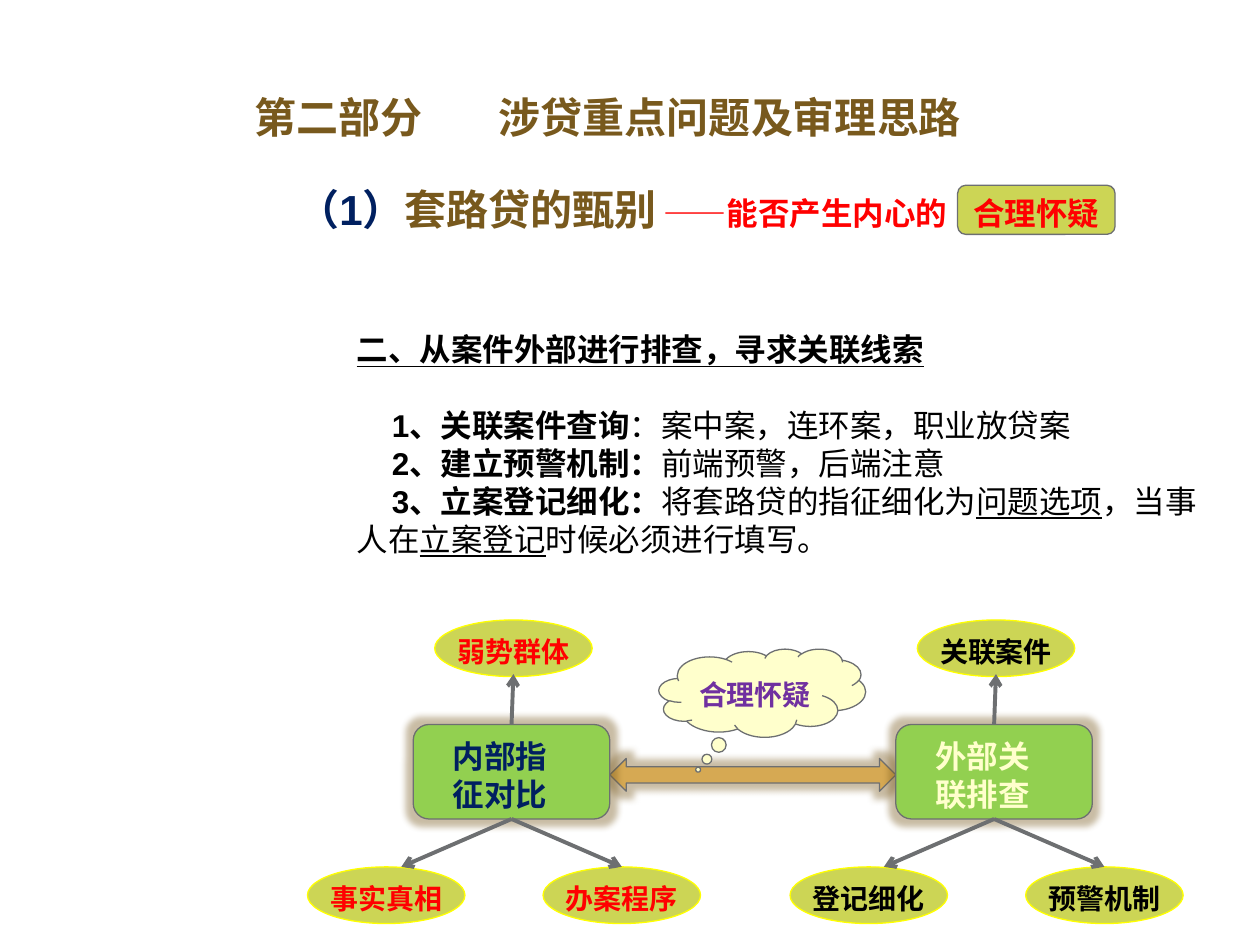
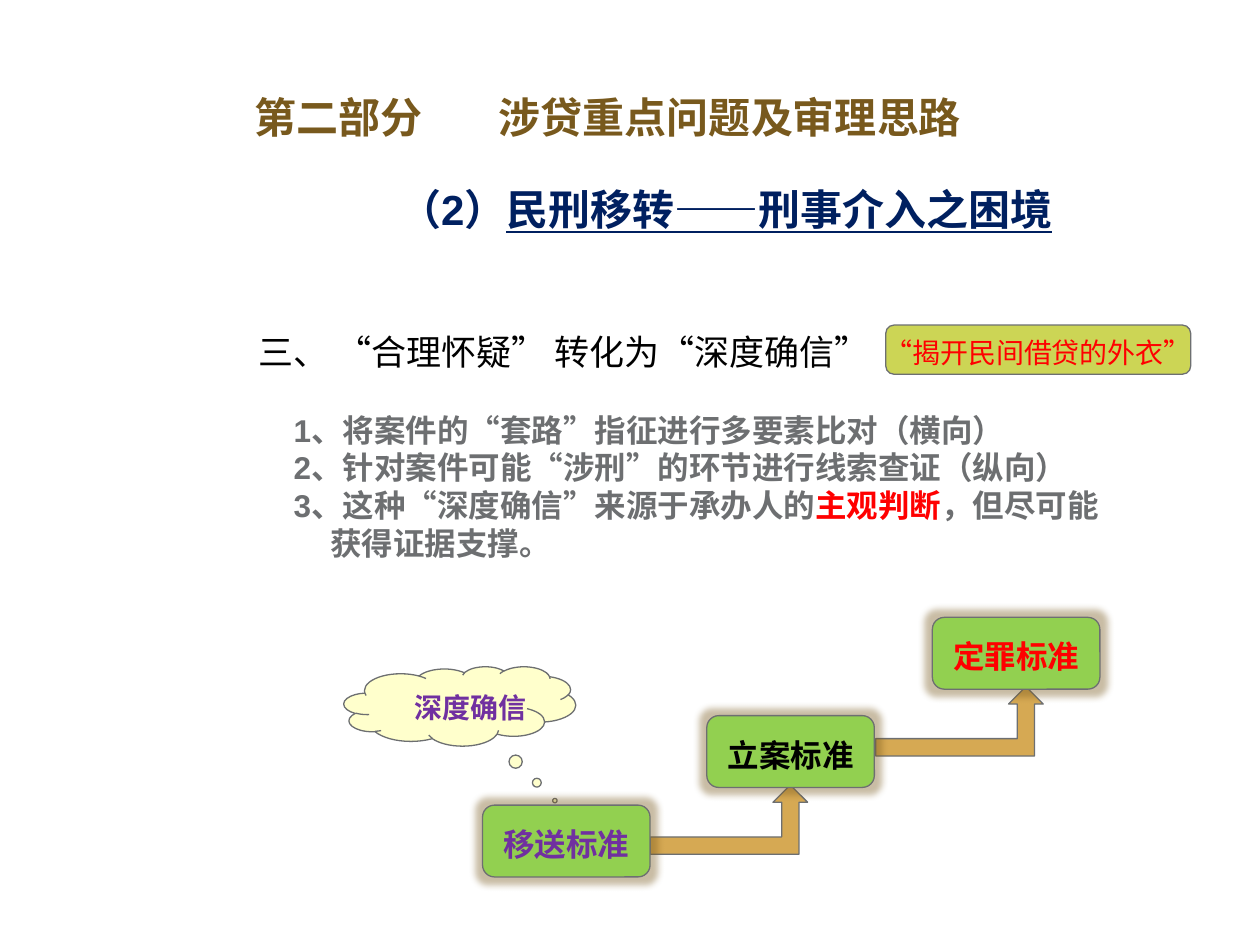
from dataclasses import dataclass

from lxml import etree
from pptx import Presentation
from pptx.dml.color import RGBColor
from pptx.enum.shapes import MSO_CONNECTOR, MSO_SHAPE
from pptx.enum.text import MSO_ANCHOR, MSO_AUTO_SIZE, PP_ALIGN
from pptx.oxml.ns import qn
from pptx.util import Inches, Pt

ROUNDED = MSO_SHAPE.ROUNDED_RECTANGLE
OVAL = MSO_SHAPE.OVAL
CLOUD = MSO_SHAPE.CLOUD_CALLOUT
DOUBLE_ARROW = MSO_SHAPE.LEFT_RIGHT_ARROW
BENT_ARROW = MSO_SHAPE.BENT_UP_ARROW
STRAIGHT = MSO_CONNECTOR.STRAIGHT
TOP, MIDDLE, BOTTOM = MSO_ANCHOR.TOP, MSO_ANCHOR.MIDDLE, MSO_ANCHOR.BOTTOM
LEFT, CENTER = PP_ALIGN.LEFT, PP_ALIGN.CENTER
FIXED_SIZE = MSO_AUTO_SIZE.NONE

BROWN = RGBColor(0x78, 0x59, 0x1D)
NAVY = RGBColor(0x00, 0x20, 0x60)
RED = RGBColor(0xFF, 0x00, 0x00)
BLACK = RGBColor(0x00, 0x00, 0x00)
GRAY = RGBColor(0x6D, 0x6F, 0x71)
PURPLE = RGBColor(0x70, 0x30, 0xA0)
OLIVE = RGBColor(0xCC, 0xD5, 0x55)
GREEN = RGBColor(0x92, 0xD0, 0x50)
ORANGE = RGBColor(0xD6, 0xA9, 0x53)
YELLOW = RGBColor(0xFF, 0xFF, 0x00)
CREAM = RGBColor(0xFF, 0xFF, 0xCC)

LATIN_FONT = "Arial"
CHINESE_FONT = "Noto Sans CJK SC"
LINE_FACTOR = 1.2
SECTION_TITLE = "第二部分\t涉贷重点问题及审理思路"
HUB_WIDTH, HUB_HEIGHT = 1.56, 0.75
OVAL_WIDTH, OVAL_HEIGHT = 1.25, 0.45
STEP_WIDTH, STEP_HEIGHT = 1.33, 0.57


@dataclass
class Span:
    text: str
    color: RGBColor = BLACK
    bold: bool = False
    underline: bool = False
    size: float = 18


def write(paragraph, spans, align=LEFT):
    paragraph.alignment = align
    paragraph.line_spacing = Pt(max(span.size for span in spans) * LINE_FACTOR)
    paragraph.space_before = Pt(0)
    for span in spans:
        run = paragraph.add_run()
        run.text = span.text
        font = run.font
        font.name = LATIN_FONT
        font.size = Pt(span.size)
        font.bold = span.bold
        font.underline = span.underline
        font.color.rgb = span.color
        east_asian = etree.SubElement(run._r.get_or_add_rPr(), qn("a:ea"))
        east_asian.set("typeface", CHINESE_FONT)


def place(box, left, top, width, height):
    box.left, box.top = Inches(left), Inches(top)
    box.width, box.height = Inches(width), Inches(height)


def set_frame(frame, anchor, wrap=True, left=0.1, right=0.1):
    frame.auto_size = FIXED_SIZE
    frame.word_wrap = wrap
    frame.vertical_anchor = anchor
    frame.margin_left, frame.margin_right = Inches(left), Inches(right)
    frame.margin_top, frame.margin_bottom = Inches(0.07), Inches(0.02)


def add_page(deck):
    page = deck.slides.add_slide(deck.slide_layouts[1])
    title = page.shapes.title
    place(title, 1.92, 0.49, 7.78, 0.66)
    set_frame(title.text_frame, BOTTOM)
    paragraph = title.text_frame.paragraphs[0]
    tabs = etree.SubElement(paragraph._p.get_or_add_pPr(), qn("a:tabLst"))
    etree.SubElement(tabs, qn("a:tab"), pos=str(Inches(1.94)), algn="l")
    write(paragraph, [Span(SECTION_TITLE, BROWN, True, size=24)])
    return page


def add_subtitle(page, left, top, width, height, spans):
    box = page.shapes.add_textbox(
        Inches(left), Inches(top), Inches(width), Inches(height))
    set_frame(box.text_frame, BOTTOM)
    write(box.text_frame.paragraphs[0], spans, CENTER)


def fill_body(page, left, top, width, height, lines):
    body = page.placeholders[1]
    place(body, left, top, width, height)
    frame = body.text_frame
    set_frame(frame, TOP)
    for index, (margin, indent, spans) in enumerate(lines):
        paragraph = frame.add_paragraph() if index else frame.paragraphs[0]
        properties = paragraph._p.get_or_add_pPr()
        properties.set("marL", str(Inches(margin)))
        properties.set("indent", str(Inches(indent)))
        etree.SubElement(properties, qn("a:buNone"))
        write(paragraph, spans)
    frame.paragraphs[1].space_before = Pt(22)


def add_shape(page, kind, left, top, width, height, fill, line=GRAY):
    shape = page.shapes.add_shape(
        kind, Inches(left), Inches(top), Inches(width), Inches(height))
    shape.shadow.inherit = False
    shape.fill.solid()
    shape.fill.fore_color.rgb = fill
    shape.line.color.rgb = line
    shape.line.width = Pt(0.75)
    return shape


def label(shape, span, wrap=False, left=0, right=0):
    set_frame(shape.text_frame, MIDDLE, wrap, left, right)
    write(shape.text_frame.paragraphs[0], [span], CENTER)


def add_glow(shape):
    effects = shape._element.spPr.find(qn("a:effectLst"))
    glow = etree.SubElement(effects, qn("a:glow"), rad=str(Inches(0.11)))
    color = etree.SubElement(glow, qn("a:srgbClr"), val=str(BROWN))
    etree.SubElement(color, qn("a:alpha"), val="40000")


def add_badge(page, left, top, width, span):
    badge = add_shape(page, ROUNDED, left, top, width, 0.39, OLIVE)
    label(badge, span)


def add_cloud(page, left, top, width, height, pointer, text, shift=0):
    cloud = add_shape(page, CLOUD, left, top, width, height, CREAM)
    cloud.adjustments[0], cloud.adjustments[1] = pointer
    label(cloud, Span(text, PURPLE, True, size=16), left=shift)


def add_branch(page, hub, site, end_x, end_y):
    branch = page.shapes.add_connector(
        STRAIGHT, hub.left, hub.top, Inches(end_x), Inches(end_y))
    branch.begin_connect(hub, site)
    branch.line.color.rgb = GRAY
    branch.line.width = Pt(2.25)
    etree.SubElement(branch.line._get_or_add_ln(), qn("a:tailEnd"), type="arrow")
    etree.SubElement(branch._element.spPr, qn("a:effectLst"))


def add_hub(page, left, top, text, text_color, oval_color, oval_texts):
    hub = add_shape(page, ROUNDED, left, top, HUB_WIDTH, HUB_HEIGHT, GREEN)
    add_glow(hub)
    label(hub, Span(text, text_color, True), True, 0.2, 0.38)
    places = [(0.17, -0.83, 0), (-0.84, 1.13, 0.12), (1.03, 1.13, 0)]
    for oval_text, (across, down, end_shift) in zip(oval_texts, places):
        oval_left, oval_top = left + across, top + down
        oval = add_shape(page, OVAL, oval_left, oval_top,
                         OVAL_WIDTH, OVAL_HEIGHT, OLIVE, YELLOW)
        label(oval, Span(oval_text, oval_color, True, size=16))
        above = down < 0
        end_y = oval_top + OVAL_HEIGHT - 0.02 if above else oval_top
        add_branch(page, hub, 0 if above else 2,
                   oval_left + OVAL_WIDTH / 2 + end_shift, end_y)


def add_step(page, left, top, text, color):
    step = add_shape(page, ROUNDED, left, top, STEP_WIDTH, STEP_HEIGHT, GREEN)
    add_glow(step)
    label(step, Span(text, color, True))


def build_screening(deck):
    page = add_page(deck)
    add_badge(page, 7.6, 1.47, 1.25, Span("合理怀疑", RED, True))
    add_subtitle(page, 1.61, 1.25, 6.66, 0.63, [
        Span("（1）", NAVY, True, size=24),
        Span("套路贷的甄别", BROWN, True, size=24),
        Span(" ——能否产生内心的", RED, True),
    ])
    fill_body(page, 2.73, 2.55, 7.03, 2.3, [
        (0, 0, [Span("二、从案件外部进行排查，寻求关联线索", bold=True, underline=True)]),
        (0, 0.28, [Span("1、关联案件查询", bold=True),
                   Span("：案中案，连环案，职业放贷案")]),
        (0, 0.28, [Span("2、建立预警机制：", bold=True),
                   Span("前端预警，后端注意")]),
        (0, 0.28, [Span("3、立案登记细化：", bold=True),
                   Span("将套路贷的指征细化为"),
                   Span("问题选项", underline=True),
                   Span("，当事人在"),
                   Span("立案登记", underline=True),
                   Span("时候必须进行填写。")]),
    ])
    add_glow(add_shape(page, DOUBLE_ARROW, 4.84, 6.02, 2.27, 0.26, ORANGE))
    add_hub(page, 3.28, 5.75, "内部指征对比", NAVY, RED,
            ["弱势群体", "事实真相", "办案程序"])
    add_hub(page, 7.11, 5.75, "外部关联排查", CREAM, BLACK,
            ["关联案件", "登记细化", "预警机制"])
    add_cloud(page, 5.23, 5.15, 1.64, 0.7, (-0.31, 0.87), "合理怀疑")


def build_transfer(deck):
    page = add_page(deck)
    add_subtitle(page, 1.87, 1.22, 7.78, 0.66, [
        Span("（2）", NAVY, True, size=24),
        Span("民刑移转——刑事介入之困境", NAVY, True, True, 24),
    ])
    fill_body(page, 1.95, 2.55, 7.81, 2.26, [
        (0, 0, [Span("三、 “合理怀疑” 转化为“深度确信”", size=20)]),
        (0, 0.28, [Span("1、将案件的“套路”指征进行多要素比对（横向）", GRAY, True)]),
        (0, 0.28, [Span("2、针对案件可能“涉刑”的环节进行线索查证（纵向）", GRAY, True)]),
        (0, 0.28, [Span("3、这种“深度确信”来源于承办人的", GRAY, True),
                   Span("主观判断", RED, True),
                   Span("，但尽可能", GRAY, True)]),
        (0.57, 0, [Span("获得证据支撑。", GRAY, True)]),
    ])
    add_badge(page, 7.03, 2.58, 2.42, Span("“揭开民间借贷的外衣”", RED, size=16))
    add_cloud(page, 2.73, 5.29, 1.84, 0.63, (0.41, 1.19), "深度确信", 0.3)
    add_shape(page, BENT_ARROW, 5.16, 6.23, 1.25, 0.55, ORANGE)
    add_shape(page, BENT_ARROW, 6.95, 5.45, 1.33, 0.55, ORANGE)
    add_step(page, 3.83, 6.39, "移送标准", PURPLE)
    add_step(page, 5.61, 5.68, "立案标准", BLACK)
    add_step(page, 7.4, 4.9, "定罪标准", RED)


def main():
    deck = Presentation()
    deck.slide_width, deck.slide_height = Inches(10), Inches(7.5)
    build_screening(deck)
    build_transfer(deck)
    deck.save("out.pptx")


if __name__ == "__main__":
    main()
